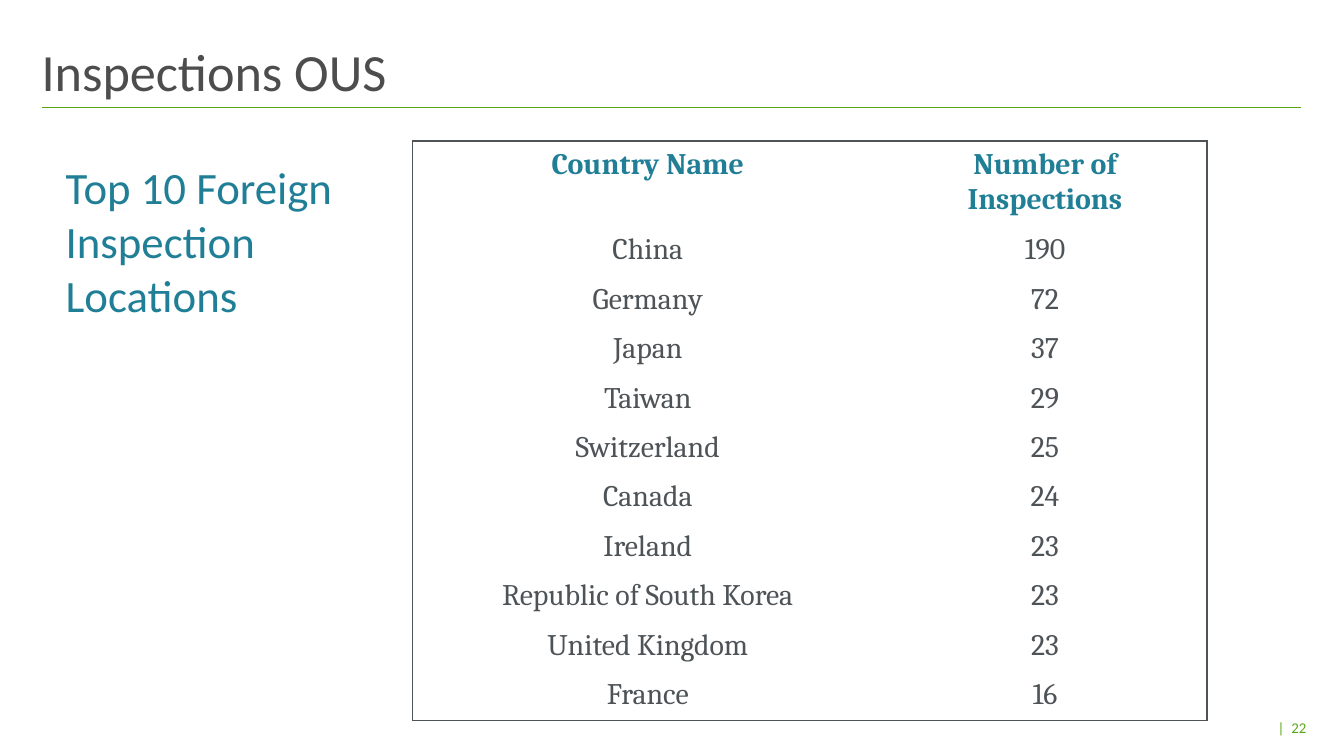
from dataclasses import dataclass

from lxml.etree import SubElement
from pptx import Presentation
from pptx.dml.color import RGBColor
from pptx.enum.shapes import MSO_CONNECTOR
from pptx.enum.text import MSO_ANCHOR as Anchor, PP_ALIGN as Align
from pptx.oxml.ns import qn
from pptx.util import Inches, Pt


@dataclass(frozen=True)
class Theme:
    """Colours, fonts and type sizes of the slide."""
    green: str = "58A618"
    teal: str = "207F96"
    title: str = "4D4D4D"
    body: str = "4D5357"
    sans: str = "Calibri"
    serif: str = "Cambria"
    title_size: int = 28
    lead_size: int = 24
    table_size: int = 16
    number_size: int = 8


THEME = Theme()
HEADINGS = ("Country Name", "Number of Inspections")
INSPECTIONS = (
    ("China", 190), ("Germany", 72), ("Japan", 37), ("Taiwan", 29),
    ("Switzerland", 25), ("Canada", 24), ("Ireland", 23),
    ("Republic of South Korea", 23), ("United Kingdom", 23), ("France", 16),
)


def write_text(frame, text, *, size, color, font=THEME.sans, bold=False, align=Align.LEFT):
    """Write one formatted paragraph into a text frame."""
    paragraph = frame.paragraphs[0]
    paragraph.alignment = align
    run = paragraph.add_run()
    run.text = text
    run.font.name = font
    run.font.size = Pt(size)
    run.font.bold = bold
    run.font.color.rgb = RGBColor.from_string(color)


def add_text(slide, box, text, *, insets=(0.1, 0.05, 0.1, 0.05), anchor=Anchor.TOP,
             wrap=True, **style):
    """Add a text box with its insets given as left, top, right, bottom."""
    shape = slide.shapes.add_textbox(*map(Inches, box))
    frame = shape.text_frame
    frame.word_wrap = wrap
    frame.vertical_anchor = anchor
    frame.margin_left, frame.margin_top, frame.margin_right, frame.margin_bottom = map(Inches, insets)
    write_text(frame, text, **style)


def add_header(slide, box):
    """Place the title with a rule along the bottom of the box."""
    left, top, width, height = box
    bottom = top + height
    rule = slide.shapes.add_connector(
        MSO_CONNECTOR.STRAIGHT, *map(Inches, (left + width, bottom, left, bottom)))
    rule.line.color.rgb = RGBColor.from_string(THEME.green)
    rule.line.width = Pt(0.5)
    SubElement(rule._element.spPr, qn("a:effectLst"))
    add_text(slide, box, "Inspections OUS", insets=(0, 0.04, 0, 0.04), anchor=Anchor.BOTTOM,
             size=THEME.title_size, color=THEME.title)


def set_borders(cell, visible):
    """Draw the named cell sides and clear the others."""
    properties = cell._tc.get_or_add_tcPr()
    for side in "LRTB":
        line = SubElement(properties, qn(f"a:ln{side}"), w=str(Pt(1)))
        if side in visible:
            fill = SubElement(line, qn("a:solidFill"))
            SubElement(fill, qn("a:srgbClr"), val=THEME.body)
        else:
            SubElement(line, qn("a:noFill"))


def add_inspection_table(slide, box):
    """Place the framed table of countries and inspection counts."""
    rows = (HEADINGS, *INSPECTIONS)
    table = slide.shapes.add_table(len(rows), len(HEADINGS), *map(Inches, box)).table
    table.horz_banding = False
    first_width, heading_height = 3.5, 0.4
    row_height = (box[3] - heading_height) / len(INSPECTIONS)
    table.columns[0].width = Inches(first_width)
    table.columns[1].width = Inches(box[2] - first_width)
    for index, values in enumerate(rows):
        heading = index == 0
        table.rows[index].height = Inches(heading_height if heading else row_height)
        edge = "T" if heading else "B" if index == len(rows) - 1 else ""
        for column, value in enumerate(values):
            cell = table.cell(index, column)
            set_borders(cell, "LR"[column] + edge)
            cell.fill.background()
            write_text(cell.text_frame, str(value), size=THEME.table_size, font=THEME.serif,
                       color=THEME.teal if heading else THEME.body, bold=heading,
                       align=Align.CENTER)


def add_lead(slide, box):
    """Place the statement beside the table."""
    add_text(slide, box, "Top 10 Foreign Inspection Locations",
             size=THEME.lead_size, color=THEME.teal)


def add_page_number(slide, box):
    """Place the page number in the corner."""
    add_text(slide, box, "|  22", insets=(0, 0.05, 0.1, 0.05), anchor=Anchor.MIDDLE,
             wrap=False, size=THEME.number_size, color=THEME.green, align=Align.RIGHT)


def main():
    """Build and save the presentation."""
    presentation = Presentation()
    presentation.slide_width = Inches(10)
    presentation.slide_height = Inches(10 * 9 / 16)
    slide = presentation.slides.add_slide(presentation.slide_layouts[6])
    add_header(slide, (0.31, 0.31, 9.37, 0.49))
    add_page_number(slide, (9.49, 5.29, 0.33, 0.24))
    add_inspection_table(slide, (3.07, 1.05, 5.91, 4.08))
    add_lead(slide, (0.39, 1.14, 2.28, 1.31))
    presentation.save("out.pptx")


if __name__ == "__main__":
    main()
